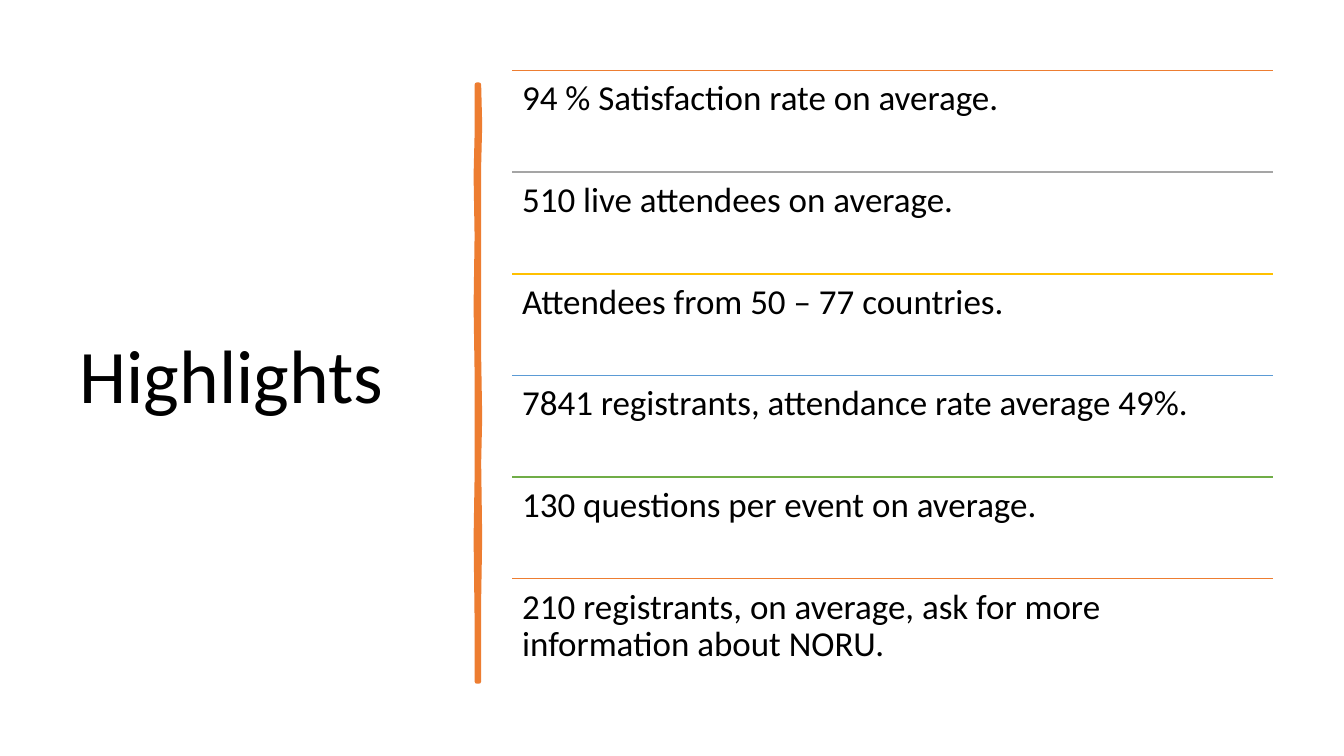
from lxml.etree import SubElement
from pptx import Presentation
from pptx.dml.color import RGBColor
from pptx.enum.shapes import MSO_CONNECTOR as Connector
from pptx.enum.text import MSO_ANCHOR as Anchor
from pptx.oxml.ns import qn
from pptx.util import Inches, Pt

COLORS = {
    "text": "000000",
    "orange": "ED7D31",
    "gray": "A5A5A5",
    "gold": "FFC000",
    "blue": "5B9BD5",
    "green": "70AD47",
}
HIGHLIGHTS = [
    ("94 % Satisfaction rate on average.", "orange"),
    ("510 live attendees on average.", "gray"),
    ("Attendees from 50 – 77 countries.", "gold"),
    ("7841 registrants, attendance rate average 49%.", "blue"),
    ("130 questions per event on average.", "green"),
    ("210 registrants, on average, ask for more information about NORU.", "orange"),
]
STROKE_RIGHT = [(0.02, 0), (0.03, 0.4), (0.02, 0.8), (0.02, 2.1), (0.02, 2.7), (0.03, 3.3),
                (0.02, 3.75), (0.03, 4.5), (0.02, 5.1), (0.02, 5.92)]
STROKE_LEFT = [(0, 5.92), (0, 5.3), (-0.01, 4.5), (0, 3.9), (0, 2.85), (-0.01, 2.2),
               (0, 1.5), (-0.01, 0.9), (0, 0.5), (0, 0)]


def rgb(name):
    """Return the named palette colour."""
    return RGBColor.from_string(COLORS[name])


def add_text(slide, box, wording, size, anchor):
    """Fill a box with one wrapped paragraph."""
    frame = slide.shapes.add_textbox(*box).text_frame
    frame.word_wrap = True
    frame.vertical_anchor = anchor
    frame.margin_left = frame.margin_right = Inches(0.1)
    frame.margin_top = frame.margin_bottom = Inches(0.1)
    paragraph = frame.paragraphs[0]
    paragraph.text = wording
    paragraph.line_spacing = 0.9
    font = paragraph.runs[0].font
    font.name, font.size = "Calibri", Pt(size)
    font.color.rgb = rgb("text")


def add_brush_stroke(slide, left, top):
    """Draw the hand-drawn vertical divider from its top left corner."""
    outline = [(left + Inches(x), top + Inches(y)) for x, y in STROKE_RIGHT + STROKE_LEFT]
    builder = slide.shapes.build_freeform(*outline[0])
    builder.add_line_segments(outline[1:], close=True)
    stroke = builder.convert_to_shape()
    stroke.shadow.inherit = False
    stroke.fill.solid()
    stroke.fill.fore_color.rgb = rgb("orange")
    stroke.line.color.rgb = rgb("orange")
    stroke.line.width = Pt(3.25)
    SubElement(stroke._element.spPr.find(qn("a:ln")), qn("a:round"))


def add_highlights(slide, left, top, width, height):
    """Stack the highlights in equal rows, each below a coloured rule."""
    row_height = height // len(HIGHLIGHTS)
    for row, (wording, color) in enumerate(HIGHLIGHTS):
        row_top = top + row * row_height
        rule = slide.shapes.add_connector(Connector.STRAIGHT, left, row_top, left + width, row_top)
        rule.line.color.rgb = rgb(color)
        rule.line.width = Pt(1)
        SubElement(rule._element.spPr, qn("a:effectLst"))
        add_text(slide, (left, row_top, width, row_height), wording, 25, Anchor.TOP)


def main():
    """Build and save the highlights slide."""
    deck = Presentation()
    deck.slide_width, deck.slide_height = Inches(13.33), Inches(7.5)
    slide = deck.slides.add_slide(deck.slide_layouts[6])
    top = Inches(0.7)
    title_box = (Inches(0.69), top, Inches(3.74), Inches(6.11))
    add_text(slide, title_box, "Highlights", 54, Anchor.MIDDLE)
    add_brush_stroke(slide, Inches(4.73), Inches(0.84))
    add_highlights(slide, Inches(5.08), top, Inches(7.55), Inches(6.05))
    deck.save("out.pptx")


if __name__ == "__main__":
    main()
